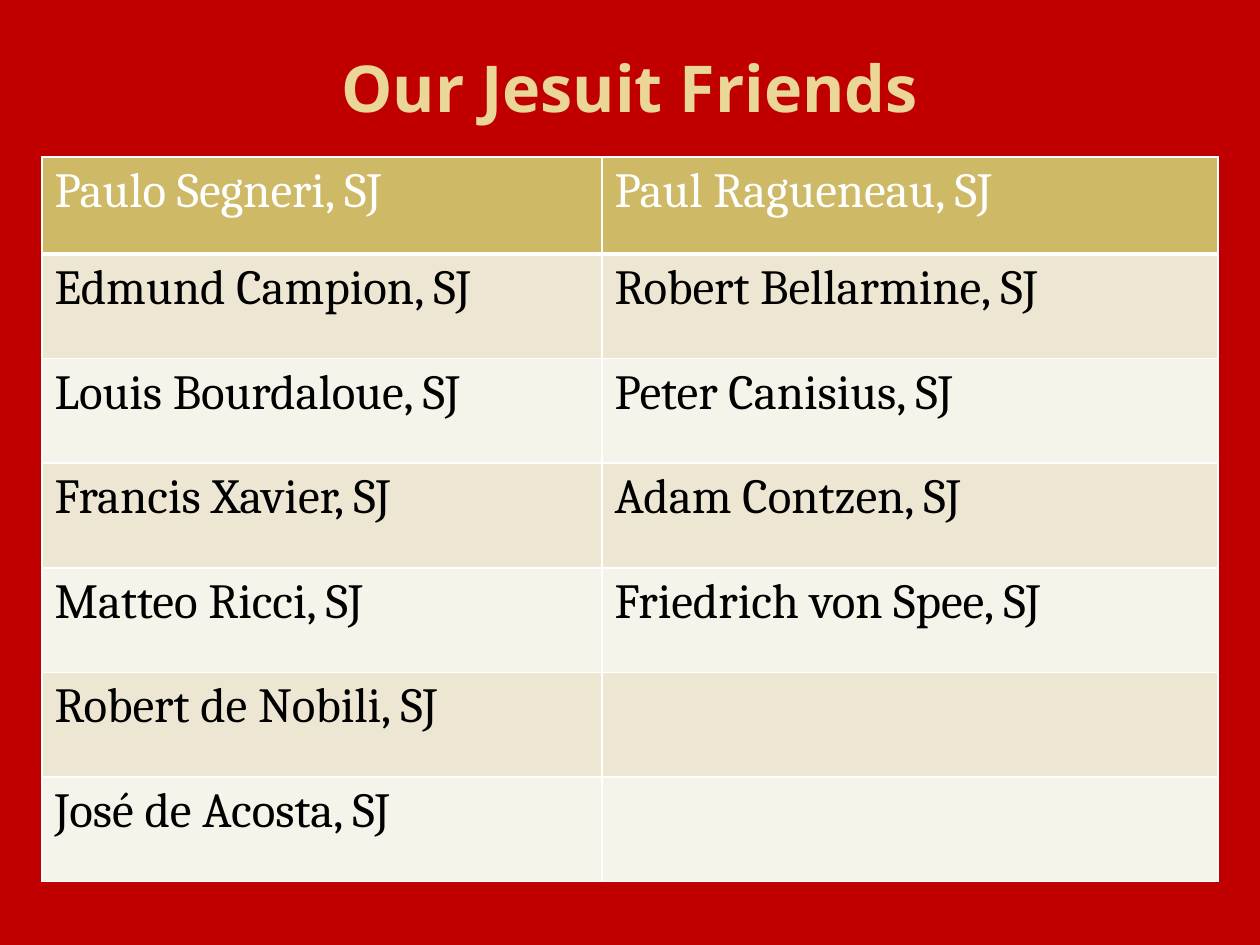
from lxml import etree
from pptx import Presentation
from pptx.dml.color import RGBColor
from pptx.enum.text import MSO_ANCHOR, PP_ALIGN
from pptx.oxml.ns import qn
from pptx.util import Pt

SCALE = 914400 / 126  # EMU in one px
CENTER = PP_ALIGN.CENTER
MIDDLE = MSO_ANCHOR.MIDDLE

RED, GOLD, SAND = "C00000", "EAD696", "CEB966"
BANDS = ["EDE6D3", "F6F3EA"]
WHITE, BLACK = "FFFFFF", "000000"

FRIENDS = [
    ("Paulo Segneri, SJ", "Paul Ragueneau, SJ"),
    ("Edmund Campion, SJ", "Robert Bellarmine, SJ"),
    ("Louis Bourdaloue, SJ", "Peter Canisius, SJ"),
    ("Francis Xavier, SJ", "Adam Contzen, SJ"),
    ("Matteo Ricci, SJ", "Friedrich von Spee, SJ"),
    ("Robert de Nobili, SJ", ""),
    ("José de Acosta, SJ", ""),
]


def px(n):
    return round(n * SCALE)


def rgb(code):
    return RGBColor.from_string(code)


def paint(obj, code):
    obj.fill.solid()
    obj.fill.fore_color.rgb = rgb(code)


def style(para, face, size, code, bold=False):
    font = para.font
    for run in para.runs:
        font = run.font
    font.name, font.size, font.bold = face, Pt(size), bold
    font.color.rgb = rgb(code)


def edge(cell, base):
    """Draw white cell borders; base is the width of the bottom one."""
    props = cell._tc.get_or_add_tcPr()
    widths = {"a:lnL": 1, "a:lnR": 1, "a:lnT": 1, "a:lnB": base}
    for i, (tag, width) in enumerate(widths.items()):
        line = etree.Element(qn(tag), w=str(Pt(width)))
        fill = etree.SubElement(line, qn("a:solidFill"))
        etree.SubElement(fill, qn("a:srgbClr"), val=WHITE)
        props.insert(i, line)


def add_title(slide, x, y, w, h):
    title = slide.shapes.title
    title.left, title.top, title.width, title.height = map(px, (x, y, w, h))
    frame = title.text_frame
    frame.text = "Our Jesuit Friends"
    frame.vertical_anchor = MIDDLE
    para = frame.paragraphs[0]
    para.alignment = CENTER
    style(para, "Noto Sans", 36.9, GOLD, True)


def add_names(slide, x, y, w, h):
    count = len(FRIENDS)
    table = slide.shapes.add_table(count, 2, px(x), px(y), px(w), px(h)).table
    left, head = 560, 97
    table.columns[0].width = px(left)
    table.columns[1].width = px(w - left)
    for r, names in enumerate(FRIENDS):
        top = r == 0
        table.rows[r].height = px(head if top else (h - head) / (count - 1))
        for c, name in enumerate(names):
            cell = table.cell(r, c)
            cell.text = name
            paint(cell, SAND if top else BANDS[(r - 1) % 2])
            edge(cell, 3 if top else 1)
            style(cell.text_frame.paragraphs[0], "Cambria", 28,
                  WHITE if top else BLACK)


def main():
    deck = Presentation()
    deck.slide_width, deck.slide_height = px(1260), px(945)
    slide = deck.slides.add_slide(deck.slide_layouts[5])
    paint(slide.background, RED)
    add_title(slide, 63, 38, 1134, 98)
    add_names(slide, 42, 157, 1176, 725)
    deck.save("out.pptx")


if __name__ == "__main__":
    main()
